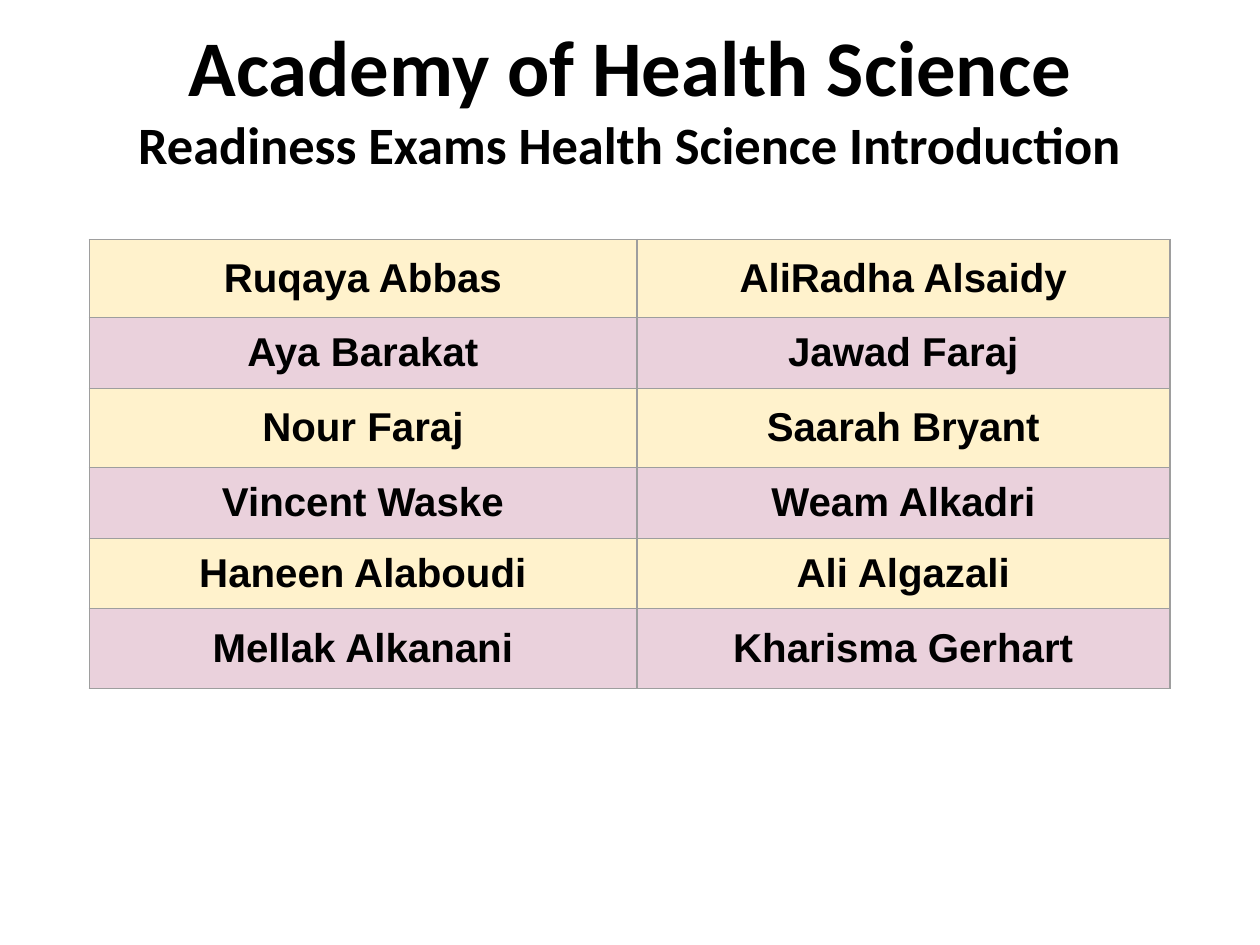
"""Build the Academy of Health Science student roster slide."""
from lxml import etree
from pptx import Presentation
from pptx.dml.color import RGBColor
from pptx.enum.text import MSO_ANCHOR, MSO_AUTO_SIZE, PP_ALIGN
from pptx.oxml.ns import qn
from pptx.util import Pt

CENTER = PP_ALIGN.CENTER
TOP, MIDDLE = MSO_ANCHOR.TOP, MSO_ANCHOR.MIDDLE
NO_AUTOFIT = MSO_AUTO_SIZE.NONE
TITLE_ONLY = 5

HEADINGS = [
    ("Academy of Health Science", 45),
    ("Readiness Exams Health Science Introduction", 30),
]
STUDENTS = [
    ("Ruqaya Abbas", "AliRadha Alsaidy"),
    ("Aya Barakat", "Jawad Faraj"),
    ("Nour Faraj", "Saarah Bryant"),
    ("Vincent Waske", "Weam Alkadri"),
    ("Haneen Alaboudi", "Ali Algazali"),
    ("Mellak Alkanani", "Kharisma Gerhart"),
]
COLUMN_WIDTHS = [313, 304.6]
ROW_HEIGHTS = [44.8, 40.3, 45.4, 40.3, 40.3, 45.4]


def rgb(value):
    return RGBColor.from_string(value)


def write(paragraph, text, *, font, size, color, bold=True, align=CENTER):
    paragraph.alignment = align
    run = paragraph.add_run()
    run.text = text
    run.font.name = font
    run.font.size = Pt(size)
    run.font.bold = bold
    run.font.color.rgb = rgb(color)


class RosterSlide:
    ink = "000000"
    border = "9E9E9E"
    bands = ("FFF2CC", "EAD1DC")
    title_font = "Calibri"
    name_font = "Arial"

    def __init__(self, deck):
        self.slide = deck.slides.add_slide(deck.slide_layouts[TITLE_ONLY])

    def title(self, headings, left, top, width, height):
        title = self.slide.shapes.title
        title.left, title.top = Pt(left), Pt(top)
        title.width, title.height = Pt(width), Pt(height)
        frame = title.text_frame
        frame.auto_size = NO_AUTOFIT
        frame.word_wrap = True
        frame.vertical_anchor = TOP
        for index, (heading, size) in enumerate(headings):
            paragraph = frame.add_paragraph() if index else frame.paragraphs[0]
            write(paragraph, heading, font=self.title_font, size=size, color=self.ink)

    def roster(self, students, left, top, widths, heights):
        roster = self.slide.shapes.add_table(
            len(heights), len(widths), Pt(left), Pt(top), Pt(sum(widths)), Pt(sum(heights))
        ).table
        for column, width in zip(roster.columns, widths):
            column.width = Pt(width)
        for index, (row, height, names) in enumerate(zip(roster.rows, heights, students)):
            row.height = Pt(height)
            for cell, name in zip(row.cells, names):
                self.name_cell(cell, name, self.bands[index % 2])

    def name_cell(self, cell, name, band):
        cell.fill.solid()
        cell.fill.fore_color.rgb = rgb(band)
        cell.vertical_anchor = MIDDLE
        cell.margin_left = cell.margin_right = Pt(7.2)
        cell.margin_top = cell.margin_bottom = Pt(7.2)
        write(cell.text_frame.paragraphs[0], name,
              font=self.name_font, size=23, color=self.ink)
        self.outline(cell)

    def outline(self, cell):
        properties = cell._tc.get_or_add_tcPr()
        for position, side in enumerate(("a:lnL", "a:lnR", "a:lnT", "a:lnB")):
            line = etree.Element(qn(side), w=str(Pt(0.75)))
            fill = etree.SubElement(line, qn("a:solidFill"))
            etree.SubElement(fill, qn("a:srgbClr"), val=self.border)
            properties.insert(position, line)


def main():
    deck = Presentation()
    deck.slide_width, deck.slide_height = Pt(720), Pt(540)
    page = RosterSlide(deck)
    page.title(HEADINGS, 3, 6.5, 714, 131)
    page.roster(STUDENTS, 51, 136.8, COLUMN_WIDTHS, ROW_HEIGHTS)
    deck.save("out.pptx")


if __name__ == "__main__":
    main()
